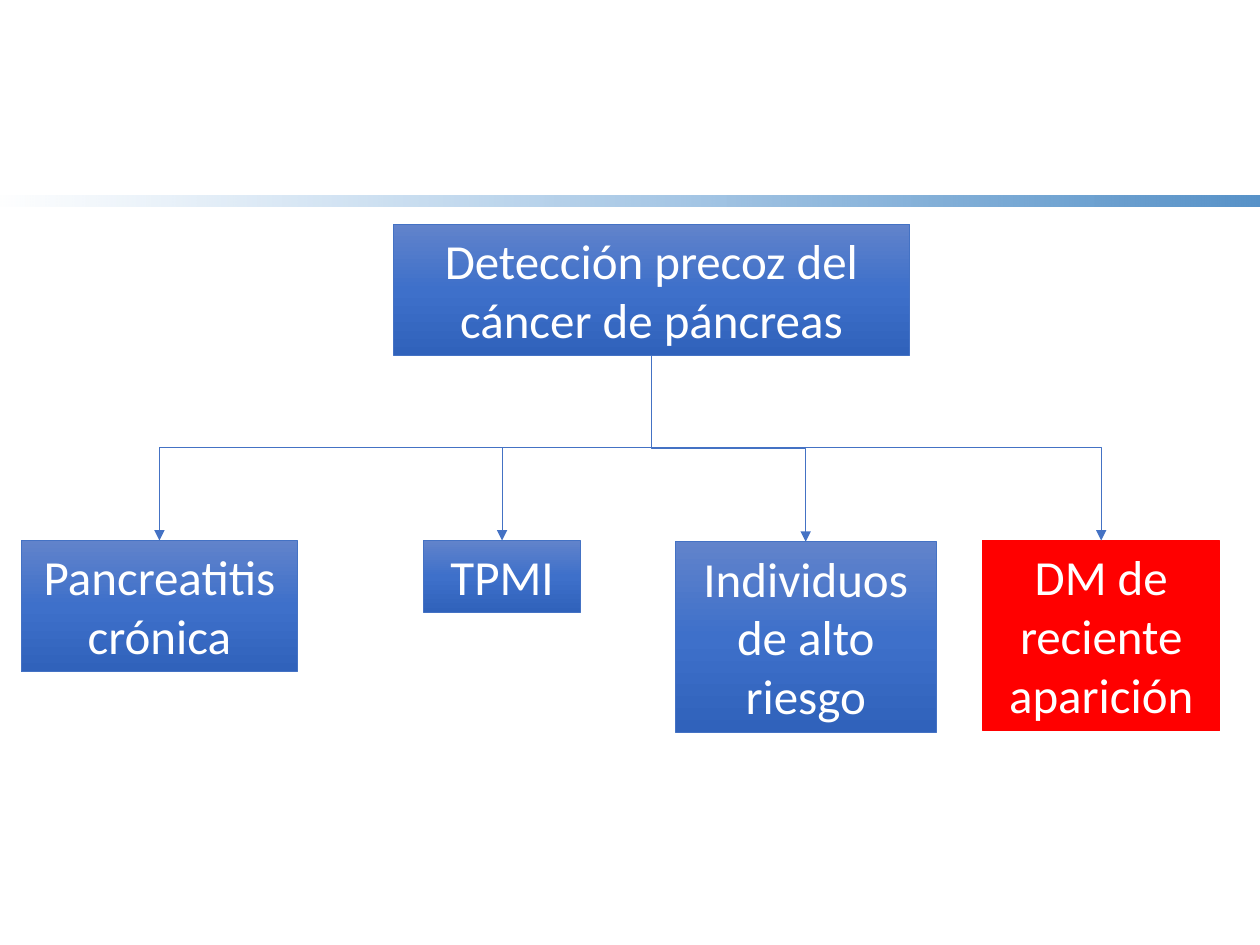
import pptx
import pptx.dml.color
import pptx.enum.shapes
import pptx.enum.text
import pptx.oxml.ns
import pptx.util
from lxml import etree

COLORS = {"blue": "4472C4", "top": "6183CB", "middle": "3E70CA", "bottom": "3062BB",
          "band": "5B9BD5", "band_end": "5591C8", "red": "FF0000", "white": "FFFFFF"}
BOX_STOPS = [(0, "top", 100), (50, "middle", 100), (100, "bottom", 100)]
BAND_STOPS = [(0, "band", 0), (100, "band_end", 100)]
ROW = 4.29
BRANCHES = [("Pancreatitis crónica", 0.17, ROW, 2.19, 1.04, False),
            ("TPMI", 3.36, ROW, 1.25, 0.57, False),
            ("Individuos de alto riesgo", 5.36, ROW + 0.01, 2.07, 1.51, False),
            ("DM de reciente aparición", 7.8, ROW, 1.88, 1.51, True)]


def rgb(name):
    """Return the named colour."""
    return pptx.dml.color.RGBColor.from_string(COLORS[name])


def add_child(parent, tag, **attributes):
    """Append a DrawingML element to a parent."""
    return etree.SubElement(parent, pptx.oxml.ns.qn(tag), attributes)


def fill_gradient(s, stops, angle):
    """Fill a shape with stops of position, colour and opacity."""
    s.fill.gradient()
    s.fill.gradient_angle = angle
    stop_list = next(s.element.iter(pptx.oxml.ns.qn("a:gsLst")))
    for old in list(stop_list):
        stop_list.remove(old)
    for position, color, opacity in stops:
        stop = add_child(stop_list, "a:gs", pos=str(position * 1000))
        value = add_child(stop, "a:srgbClr", val=COLORS[color])
        if opacity < 100:
            add_child(value, "a:alpha", val=str(opacity * 1000))


def add_rectangle(slide, x, y, w, h):
    """Add a rectangle without shadow, placed in inches."""
    kind = pptx.enum.shapes.MSO_SHAPE.RECTANGLE
    s = slide.shapes.add_shape(kind, *map(pptx.util.Inches, (x, y, w, h)))
    s.shadow.inherit = False
    return s


def add_band(slide):
    """Add the fading band under the header area."""
    s = add_rectangle(slide, -0.06, 1.55, 10.2, 0.09)
    fill_gradient(s, BAND_STOPS, 0)
    s.line.fill.background()


def add_box(slide, text, x, y, w, h, highlighted=False):
    """Add a labelled box of the tree."""
    s = add_rectangle(slide, x, y, w, h)
    if highlighted:
        s.fill.solid()
        s.fill.fore_color.rgb = rgb("red")
    else:
        fill_gradient(s, BOX_STOPS, 270)
    s.line.color.rgb = rgb("red" if highlighted else "blue")
    s.line.width = pptx.util.Pt(0.5)
    tf = s.text_frame
    tf.word_wrap = True
    tf.auto_size = pptx.enum.text.MSO_AUTO_SIZE.SHAPE_TO_FIT_TEXT
    tf.vertical_anchor = pptx.enum.text.MSO_ANCHOR.TOP
    p = tf.paragraphs[0]
    p.alignment = pptx.enum.text.PP_ALIGN.CENTER
    r = p.add_run()
    r.text = text
    r.font.name = "Calibri"
    r.font.size = pptx.util.Pt(28)
    r.font.color.rgb = rgb("white")
    return s


def add_branch(slide, parent, child):
    """Join the bottom of a box to the top of another by an elbow arrow."""
    x1, y1 = parent.left + parent.width // 2, parent.top + parent.height
    x2, y2 = child.left + child.width // 2, child.top
    kind = pptx.enum.shapes.MSO_CONNECTOR.ELBOW
    c = slide.shapes.add_connector(kind, x1, y1, x2, y2)
    c.begin_connect(parent, 2)
    c.end_connect(child, 0)
    c.width, c.height = y2 - y1, abs(x2 - x1)
    c.left = (x1 + x2 - c.width) // 2
    c.top = (y1 + y2 - c.height) // 2
    xfrm = next(c.element.iter(pptx.oxml.ns.qn("a:xfrm")))
    xfrm.set("rot", str((270 if x2 > x1 else 90) * 60000))
    xfrm.set("flipH", "1" if x2 > x1 else "0")
    c.line.color.rgb = rgb("blue")
    c.line.width = pptx.util.Pt(0.5)
    line = next(c.element.iter(pptx.oxml.ns.qn("a:ln")))
    add_child(line, "a:tailEnd", type="triangle")
    add_child(line.getparent(), "a:effectLst")


def main():
    """Build the slide and save it."""
    prs = pptx.Presentation()
    prs.slide_width, prs.slide_height = pptx.util.Inches(10), pptx.util.Inches(7.5)
    slide = prs.slides.add_slide(prs.slide_layouts[6])
    add_band(slide)
    root = add_box(slide, "Detección precoz del cáncer de páncreas", 3.12, 1.78, 4.1, 1.04)
    children = [add_box(slide, *branch) for branch in BRANCHES]
    for child in children:
        add_branch(slide, root, child)
    prs.save("out.pptx")


if __name__ == "__main__":
    main()
